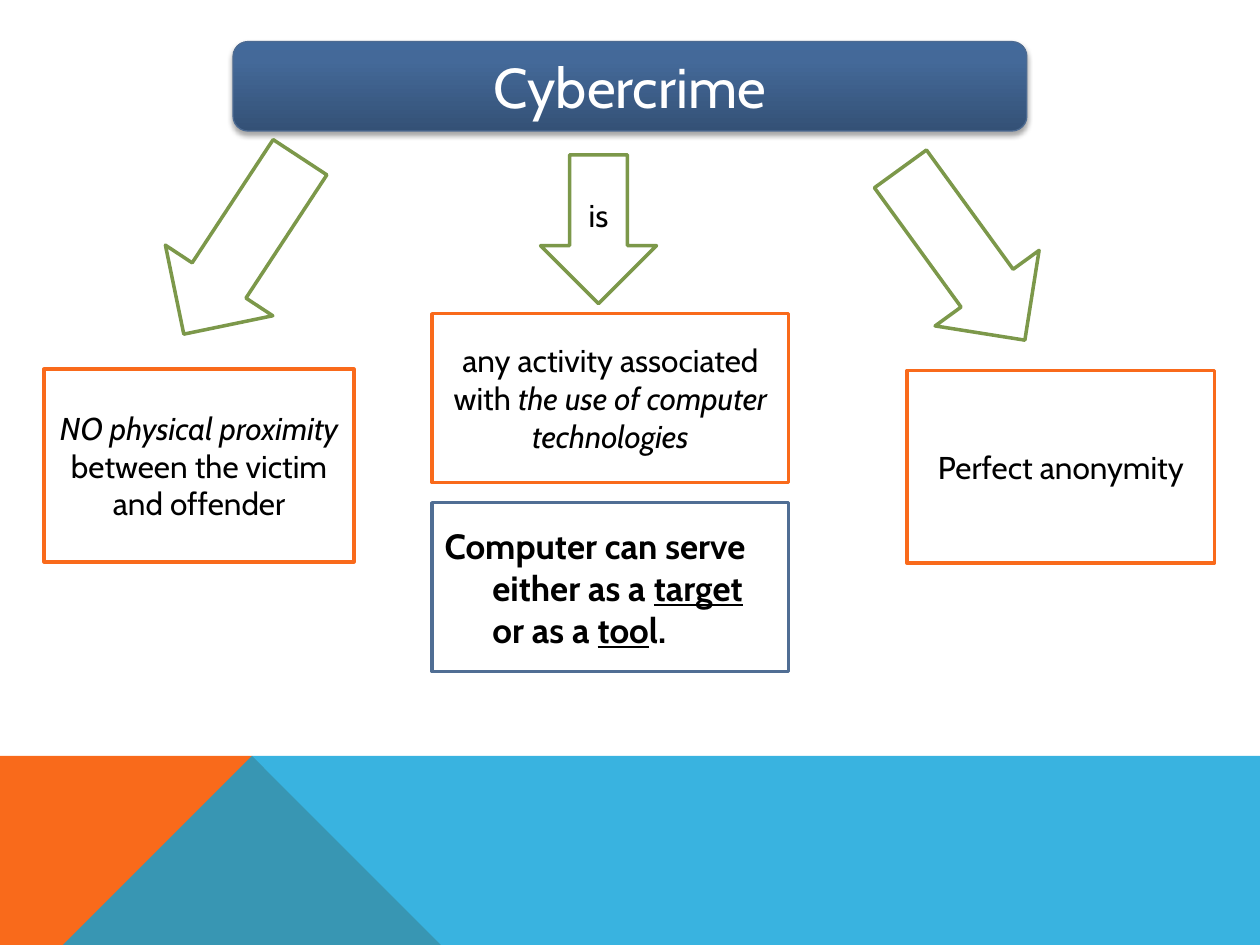
from copy import deepcopy

from lxml import etree
from pptx import Presentation
from pptx import util as u
from pptx.dml.color import RGBColor
from pptx.enum import shapes, text
from pptx.oxml import ns

FONT = "Cabin"
BLACK = RGBColor(0x00, 0x00, 0x00)
WHITE = RGBColor(0xFF, 0xFF, 0xFF)
ORANGE = RGBColor(0xF9, 0x6A, 0x1B)
SKY = RGBColor(0x08, 0xA1, 0xD9)
GREEN = RGBColor(0x7C, 0x98, 0x4A)
STEEL = RGBColor(0x50, 0x6E, 0x94)
TITLE_EDGE = RGBColor(0x4D, 0x6B, 0x92)
TITLE_STOPS = [(0, RGBColor(0x34, 0x51, 0x76)), (0.8, RGBColor(0x44, 0x69, 0x99)),
               (1, RGBColor(0x42, 0x6A, 0x9C))]
KIND = shapes.MSO_SHAPE

# Content: runs are (words, style letters): b bold, i italic, u underlined
TITLE = [("Cybercrime", "")]
BOXES = [  # place, edge colour, runs, text format
    ((3.43, 2.49, 2.83, 1.34), ORANGE,
     [("any activity associated with ", ""), ("the use of computer technologies", "i")], {}),
    ((0.35, 2.93, 2.46, 1.53), ORANGE,
     [("NO physical proximity", "i"), (" between the victim and offender", "")], {}),
    ((7.2, 2.94, 2.44, 1.53), ORANGE, [("Perfect anonymity", "")], {}),
    ((3.43, 3.99, 2.83, 1.34), STEEL,
     [("Computer can serve either as a ", "b"), ("target", "bu"), (" or as a ", "b"),
      ("too", "bu"), ("l.", "b")],
     dict(size=20, align=text.PP_ALIGN.LEFT, hanging=0.38, before=8)),
]
ARROWS = [  # preset, place, rotation, runs
    (KIND.DOWN_ARROW, (4.29, 1.23, 0.92, 1.18), 0, [("is", "")]),
    (KIND.LEFT_ARROW, (1.08, 1.44, 1.68, 1.02), 303.3, []),
    (KIND.LEFT_ARROW, (6.8, 1.51, 1.68, 1.02), 234, []),
]
BAND_TOP, PEAK = 5.52, 2.23
BANDS = [  # outline, colour, opacity in percent
    ([(0, 7.5), (0, BAND_TOP), (PEAK, BAND_TOP), (3.91, 7.5)], ORANGE, 100),
    ([(0, 7.5), (PEAK, BAND_TOP), (10, BAND_TOP), (10, 7.5)], SKY, 80),
]


def write(shape, runs, size=18, color=BLACK, align=text.PP_ALIGN.CENTER, hanging=0, before=0):
    frame = shape.text_frame
    frame.word_wrap = True
    frame.vertical_anchor = text.MSO_ANCHOR.MIDDLE
    para = frame.paragraphs[0]
    para.alignment = align
    para.space_before = u.Pt(before)
    if hanging:
        props = para._p.get_or_add_pPr()
        props.set("marL", str(u.Inches(hanging)))
        props.set("indent", str(-u.Inches(hanging)))
    for words, style in runs:
        span = para.add_run()
        span.text = words
        font = span.font
        font.name, font.size, font.color.rgb = FONT, u.Pt(size), color
        font.bold, font.italic, font.underline = ("b" in style, "i" in style, "u" in style)


def add_box(page, kind, place, edge, width=2, rotation=0):
    box = page.shapes.add_shape(kind, *map(u.Inches, place))
    box.shadow.inherit = False
    box.rotation = rotation
    box.fill.solid()
    box.fill.fore_color.rgb = WHITE
    box.line.color.rgb = edge
    box.line.width = u.Pt(width)
    return box


def add_band(page, points, color, opacity):
    builder = page.shapes.build_freeform(*points[0], scale=u.Inches(1))
    builder.add_line_segments(points[1:], close=True)
    band = builder.convert_to_shape()
    band.shadow.inherit = False
    band.line.fill.background()
    band.fill.solid()
    band.fill.fore_color.rgb = color
    if opacity < 100:
        tint = band._element.spPr.find(".//" + ns.qn("a:srgbClr"))
        etree.SubElement(tint, ns.qn("a:alpha"), val=str(opacity * 1000))


def add_title(page):
    box = add_box(page, KIND.ROUNDED_RECTANGLE, (1.85, 0.33, 6.3, 0.71), TITLE_EDGE, 0.75)
    box.fill.gradient()
    box.fill.gradient_angle = 90
    stop_list = box._element.spPr.find(".//" + ns.qn("a:gsLst"))
    stop_list.append(deepcopy(stop_list[-1]))
    for stop, (position, color) in zip(box.fill.gradient_stops, TITLE_STOPS):
        stop.position = position
        stop.color.rgb = color
    # Soft shadow straight below
    effects = box._element.spPr.find(ns.qn("a:effectLst"))
    shadow = etree.SubElement(effects, ns.qn("a:outerShdw"), blurRad=str(u.Pt(3.1)),
                              dist=str(u.Pt(1.8)), dir="5400000", rotWithShape="0")
    shade = etree.SubElement(shadow, ns.qn("a:srgbClr"), val=str(BLACK))
    etree.SubElement(shade, ns.qn("a:alpha"), val="35000")
    write(box, TITLE, size=32, color=WHITE)


def main():
    deck = Presentation()
    deck.slide_width, deck.slide_height = u.Inches(10), u.Inches(7.5)
    page = deck.slides.add_slide(deck.slide_layouts[6])

    # Coloured foot of the page
    for band in BANDS:
        add_band(page, *band)

    # Title, arrows and the statements they lead to
    add_title(page)
    for kind, place, rotation, runs in ARROWS:
        arrow = add_box(page, kind, place, GREEN, rotation=rotation)
        if runs:
            write(arrow, runs)
    for place, edge, runs, look in BOXES:
        write(add_box(page, KIND.RECTANGLE, place, edge), runs, **look)

    deck.save("out.pptx")


if __name__ == "__main__":
    main()
